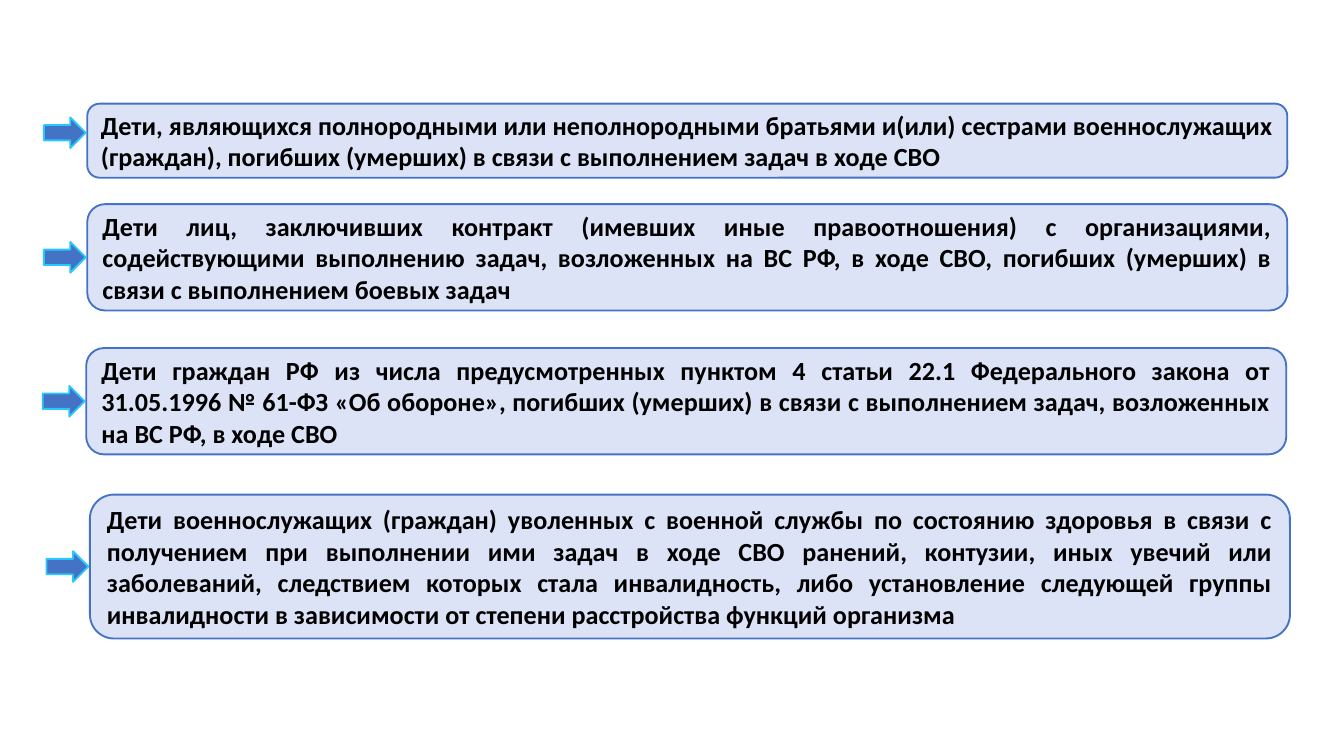
from dataclasses import dataclass

from pptx import Presentation
from pptx.dml.color import RGBColor
from pptx.enum.shapes import MSO_SHAPE
from pptx.enum.text import MSO_ANCHOR, PP_ALIGN
from pptx.util import Cm, Pt

ROUNDED_RECTANGLE = MSO_SHAPE.ROUNDED_RECTANGLE
RIGHT_ARROW = MSO_SHAPE.RIGHT_ARROW
MIDDLE = MSO_ANCHOR.MIDDLE
JUSTIFY = PP_ALIGN.JUSTIFY
BLANK_LAYOUT = 6

# Geometry in centimetres
CARD_WIDTH = 22.68
ARROW_WIDTH, ARROW_HEIGHT = 0.79, 0.58
ARROW_OFFSET = 0.82


@dataclass(frozen=True)
class Theme:
    card_fill: RGBColor = RGBColor(0xDD, 0xE3, 0xF7)
    accent: RGBColor = RGBColor(0x44, 0x72, 0xC4)
    arrow_line: RGBColor = RGBColor(0x29, 0xC7, 0xFF)
    text: RGBColor = RGBColor(0, 0, 0)
    font_name: str = "Calibri"
    font_size: Pt = Pt(14)
    line_width: Pt = Pt(1)


class SlideBuilder:
    def __init__(self, slide, theme):
        self.slide = slide
        self.theme = theme

    def add_shape(self, kind, left, top, width, height, fill, line):
        shape = self.slide.shapes.add_shape(
            kind, Cm(left), Cm(top), Cm(width), Cm(height))
        shape.shadow.inherit = False
        shape.fill.solid()
        shape.fill.fore_color.rgb = fill
        shape.line.color.rgb = line
        shape.line.width = self.theme.line_width
        return shape

    def add_card(self, left, top, height, text):
        theme = self.theme
        shape = self.add_shape(ROUNDED_RECTANGLE, left, top, CARD_WIDTH, height,
                               theme.card_fill, theme.accent)
        text_frame = shape.text_frame
        text_frame.word_wrap = True
        text_frame.vertical_anchor = MIDDLE
        text_frame.margin_left = text_frame.margin_right = Cm(0.19)
        text_frame.margin_top = text_frame.margin_bottom = Cm(0.1)
        text_frame.text = text
        paragraph = text_frame.paragraphs[0]
        paragraph.alignment = JUSTIFY
        font = paragraph.runs[0].font
        font.name = theme.font_name
        font.size = theme.font_size
        font.bold = True
        font.color.rgb = theme.text

    def add_arrow(self, left, middle):
        self.add_shape(RIGHT_ARROW, left, middle - ARROW_HEIGHT / 2,
                       ARROW_WIDTH, ARROW_HEIGHT,
                       self.theme.accent, self.theme.arrow_line)


# Card left, top, height, distance of the arrow above the card's middle, text
CATEGORIES = [
    (1.65, 1.96, 1.4, 0.15,
     "Дети, являющихся полнородными или неполнородными братьями и(или) сестрами "
     "военнослужащих (граждан), погибших (умерших) в связи с выполнением задач "
     "в ходе СВО"),
    (1.65, 3.86, 2.01, 0,
     "Дети лиц, заключивших контракт (имевших иные правоотношения) с "
     "организациями, содействующими выполнению задач, возложенных на ВС РФ, "
     "в ходе СВО, погибших (умерших) в связи с выполнением боевых задач"),
    (1.63, 6.58, 2.01, 0,
     "Дети граждан РФ из числа предусмотренных пунктом 4 статьи 22.1 "
     "Федерального закона от 31.05.1996 № 61-ФЗ «Об обороне», погибших (умерших) "
     "в связи с выполнением задач, возложенных на ВС РФ, в ходе СВО"),
    (1.7, 9.35, 2.72, 0,
     "Дети военнослужащих (граждан) уволенных с военной службы по состоянию "
     "здоровья в связи с получением при выполнении ими задач в ходе СВО ранений, "
     "контузии, иных увечий или заболеваний, следствием которых стала "
     "инвалидность, либо установление следующей группы инвалидности в "
     "зависимости от степени расстройства функций организма"),
]


def main():
    presentation = Presentation()
    presentation.slide_width = Cm(25.4)
    presentation.slide_height = Cm(14.29)
    slide = presentation.slides.add_slide(presentation.slide_layouts[BLANK_LAYOUT])
    builder = SlideBuilder(slide, Theme())

    # Category cards
    for left, top, height, _, text in CATEGORIES:
        builder.add_card(left, top, height, text)

    # Arrows pointing at the cards
    for left, top, height, lift, _ in CATEGORIES:
        builder.add_arrow(left - ARROW_OFFSET, top + height / 2 - lift)

    presentation.save("out.pptx")


if __name__ == "__main__":
    main()
